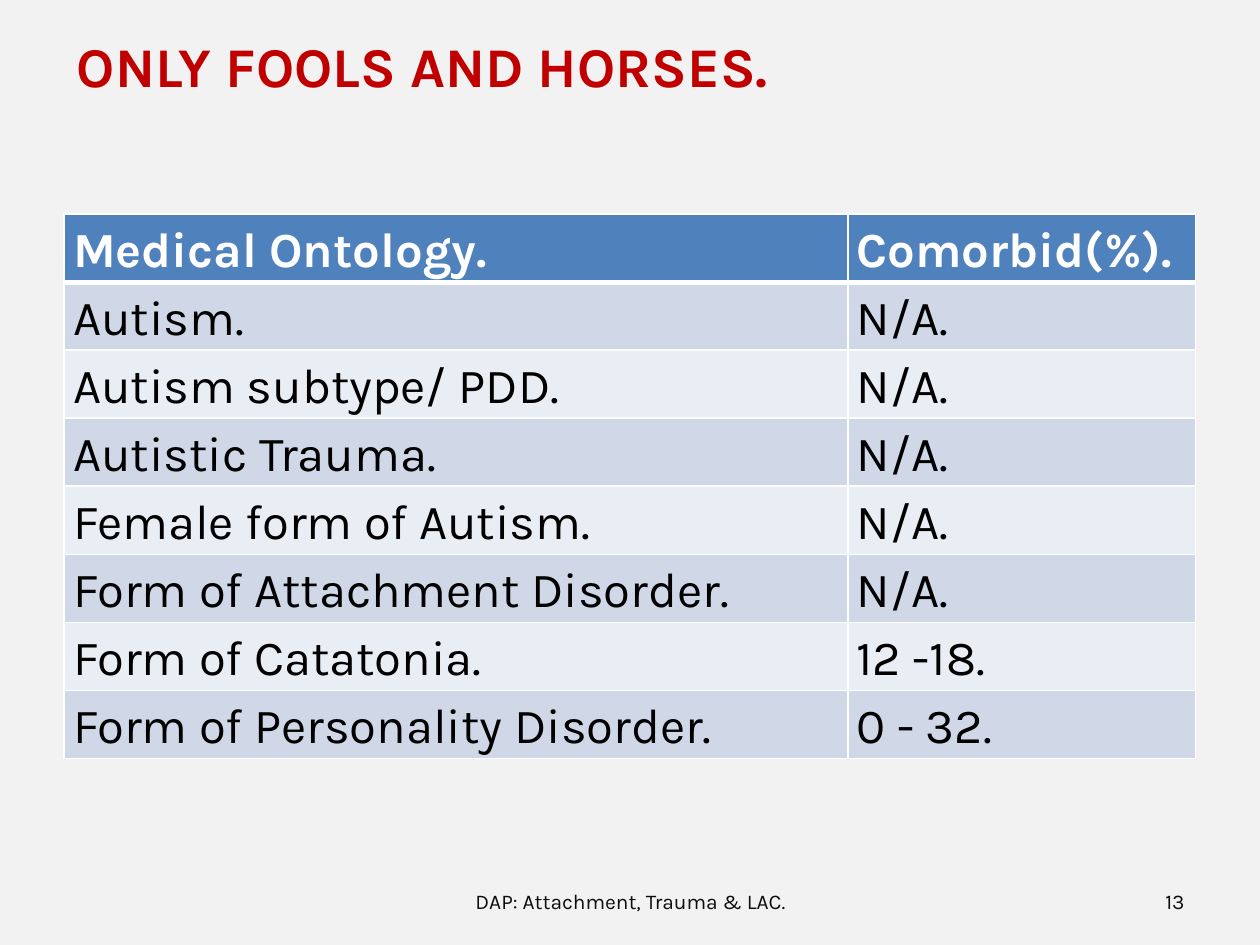
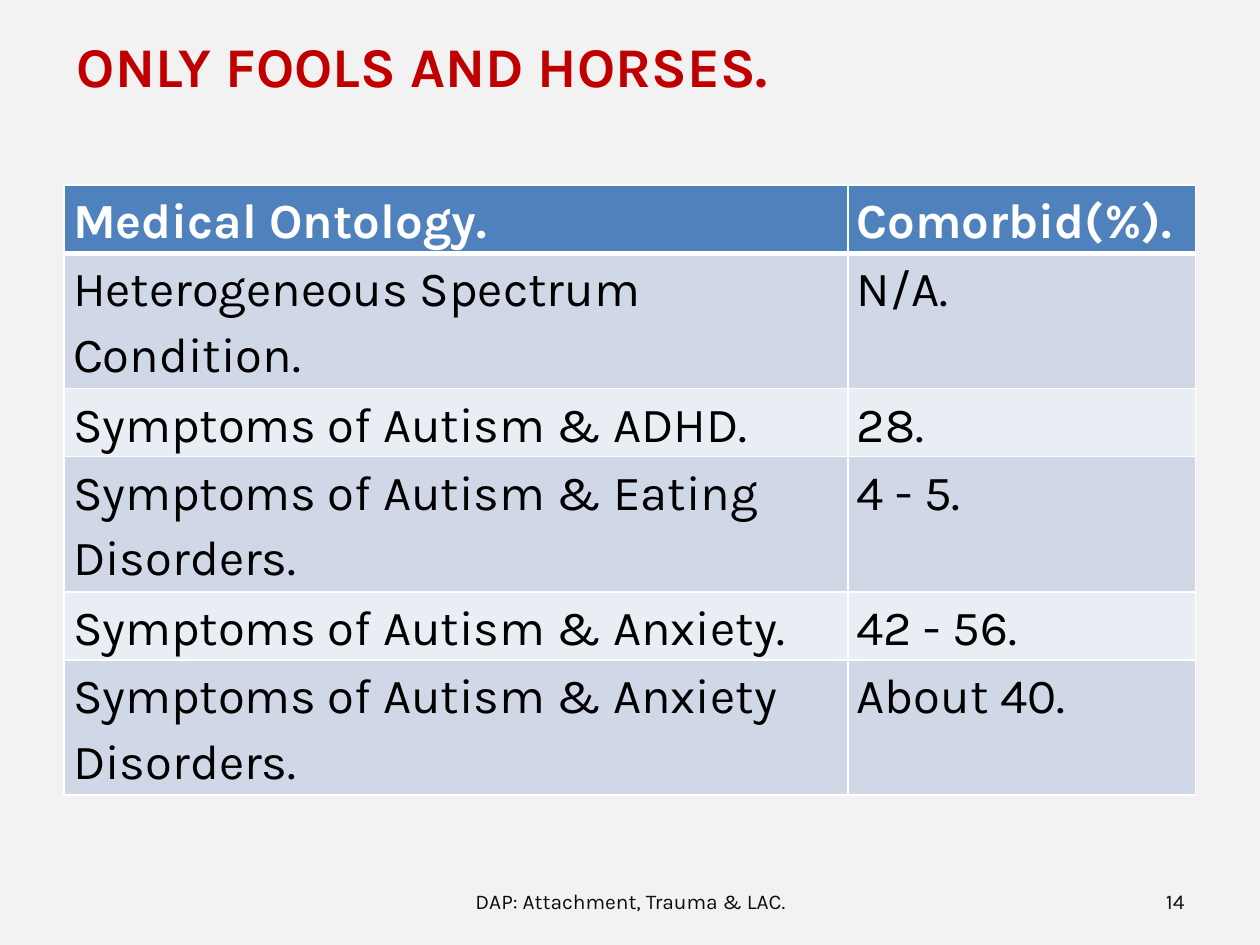
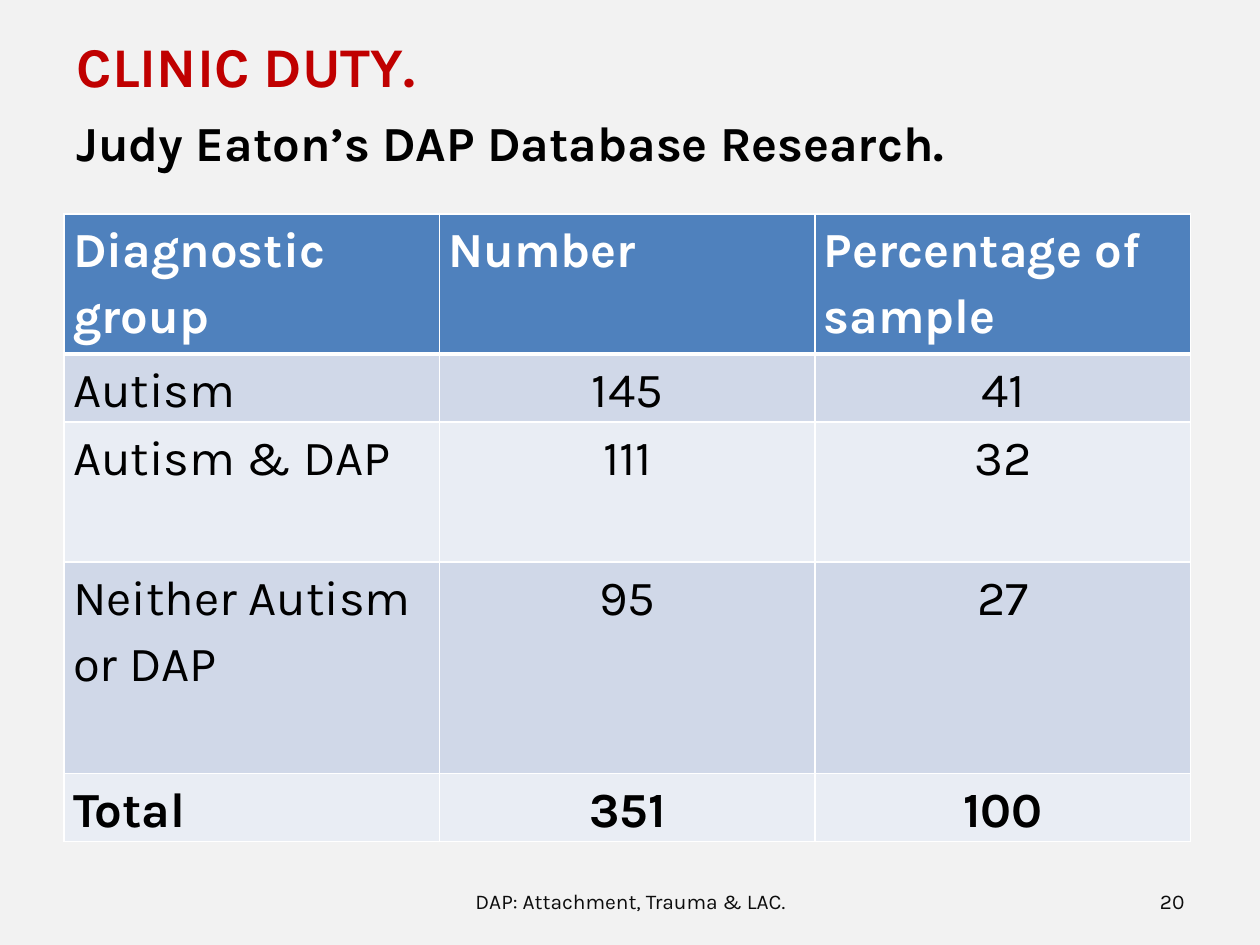
from dataclasses import dataclass

from pptx import Presentation
from pptx import util as u
from pptx.dml.color import RGBColor
from pptx.enum import text as t
from pptx.oxml import parse_xml
from pptx.oxml.ns import nsdecls


@dataclass(frozen=True)
class Theme:
    font: str = "Karla"
    page: str = "F2F2F2"
    title: str = "C00000"
    foot: str = "0D0D0D"
    ink: str = "000000"
    white: str = "FFFFFF"
    head: str = "4F81BD"
    bands: tuple = ("D0D8E8", "E9EDF4")
    big: int = 32
    body: int = 28
    small: int = 12


THEME = Theme()
LEFT, WIDTH = 0.51, 8.94
LINE, PAIR = 0.54, 1.07
FOOTER = "DAP: Attachment, Trauma & LAC."
FOOLS = "ONLY FOOLS AND HORSES."
ONTOLOGY = ("Medical Ontology.", "Comorbid(%).")

SLIDES = [
    {
        "page": 13, "title": FOOLS, "top": 1.7,
        "cols": [6.22, 2.76], "heights": [LINE] * 8, "after": 10,
        "rows": [
            ONTOLOGY,
            ("Autism.", "N/A."),
            ("Autism subtype/ PDD.", "N/A."),
            ("Autistic Trauma.", "N/A."),
            ("Female form of Autism.", "N/A."),
            ("Form of Attachment Disorder.", "N/A."),
            ("Form of Catatonia.", "12 -18."),
            ("Form of Personality Disorder.", "0 - 32."),
        ],
    },
    {
        "page": 14, "title": FOOLS, "top": 1.47,
        "cols": [6.22, 2.76], "heights": [LINE, PAIR] * 3, "after": 10,
        "rows": [
            ONTOLOGY,
            ("Heterogeneous Spectrum Condition.", "N/A."),
            ("Symptoms of Autism & ADHD.", "28."),
            ("Symptoms of Autism & Eating Disorders.", "4 - 5."),
            ("Symptoms of Autism & Anxiety.", "42 - 56."),
            ("Symptoms of Autism & Anxiety Disorders.", "About 40."),
        ],
    },
    {
        "page": 20, "title": "CLINIC DUTY.", "top": 1.7,
        "sub": "Judy Eaton’s DAP Database Research.",
        "cols": [2.98] * 3, "heights": [1.11, LINE, 1.11, 1.68, LINE],
        "after": 0, "center": True, "total": True,
        "rows": [
            ("Diagnostic group", "Number", "Percentage of sample"),
            ("Autism", "145", "41"),
            ("Autism & DAP", "111", "32"),
            ("Neither Autism or DAP", "95", "27"),
            ("Total", "351", "100"),
        ],
    },
]


def write(frame, words, size, color, bold=False, align=t.PP_ALIGN.LEFT):
    frame.text = words
    frame.word_wrap = True
    para = frame.paragraphs[0]
    para.alignment = align
    font = para.runs[0].font
    font.name, font.size, font.bold = THEME.font, u.Pt(size), bold
    font.color.rgb = RGBColor.from_string(color)
    return para


def add_text(slide, box, words, size, color, **style):
    frame = slide.shapes.add_textbox(*map(u.Inches, box)).text_frame
    write(frame, words, size, color, **style)
    return frame


def add_title(slide, words):
    title = slide.shapes.title
    title.left, title.top = u.Inches(LEFT), u.Inches(0.2)
    title.width, title.height = u.Inches(WIDTH), u.Inches(0.64)
    frame = title.text_frame
    write(frame, words, THEME.big, THEME.title, bold=True)
    frame.vertical_anchor = t.MSO_ANCHOR.TOP
    frame.auto_size = t.MSO_AUTO_SIZE.SHAPE_TO_FIT_TEXT


def add_footer(slide, page):
    parts = [
        ((3.42, 6.95, 3.17, 0.4), FOOTER, t.PP_ALIGN.CENTER),
        ((7.17, 6.95, 2.33, 0.4), str(page), t.PP_ALIGN.RIGHT),
    ]
    for box, words, align in parts:
        frame = add_text(slide, box, words, THEME.small, THEME.foot, align=align)
        frame.vertical_anchor = t.MSO_ANCHOR.MIDDLE


def add_edges(cell, row):
    widths = {"L": 1, "R": 1, "T": 3 if row == 1 else 1, "B": 3 if row == 0 else 1}
    props = cell._tc.get_or_add_tcPr()
    for side, width in widths.items():
        props.append(parse_xml(
            f'<a:ln{side} {nsdecls("a")} w="{u.Pt(width)}"><a:solidFill>'
            f'<a:srgbClr val="{THEME.white}"/></a:solidFill></a:ln{side}>'
        ))


def fill_cell(cell, words, row, bold, align, after):
    head = row == 0
    add_edges(cell, row)
    cell.margin_left = cell.margin_right = u.Inches(0.07)
    cell.margin_top = cell.margin_bottom = 0
    cell.fill.solid()
    color = THEME.head if head else THEME.bands[(row - 1) % 2]
    cell.fill.fore_color.rgb = RGBColor.from_string(color)
    ink = THEME.white if head else THEME.ink
    para = write(cell.text_frame, words, THEME.body, ink, bold, align)
    para.line_spacing = 1.15
    para.space_after = u.Pt(after)


def add_grid(slide, data):
    rows, cols, heights = data["rows"], data["cols"], data["heights"]
    box = (LEFT, data["top"], sum(cols), sum(heights))
    grid = slide.shapes.add_table(len(rows), len(cols), *map(u.Inches, box)).table
    for col, width in zip(grid.columns, cols):
        col.width = u.Inches(width)
    for row, height in zip(grid.rows, heights):
        row.height = u.Inches(height)
    for r, row in enumerate(rows):
        bold = r == 0 or (data.get("total", False) and r == len(rows) - 1)
        for c, words in enumerate(row):
            mid = data.get("center") and r and c
            align = t.PP_ALIGN.CENTER if mid else t.PP_ALIGN.LEFT
            fill_cell(grid.cell(r, c), words, r, bold, align, data["after"])


def main():
    deck = Presentation()
    deck.slide_width, deck.slide_height = u.Inches(10), u.Inches(7.5)
    back = deck.slide_master.background.fill
    back.solid()
    back.fore_color.rgb = RGBColor.from_string(THEME.page)
    for data in SLIDES:
        slide = deck.slides.add_slide(deck.slide_layouts[5])
        add_footer(slide, data["page"])
        add_title(slide, data["title"])
        if "sub" in data:
            box = (LEFT, 0.84, WIDTH, 1.51)
            add_text(slide, box, data["sub"], THEME.body, THEME.ink, bold=True)
        add_grid(slide, data)
    deck.save("out.pptx")


if __name__ == "__main__":
    main()
